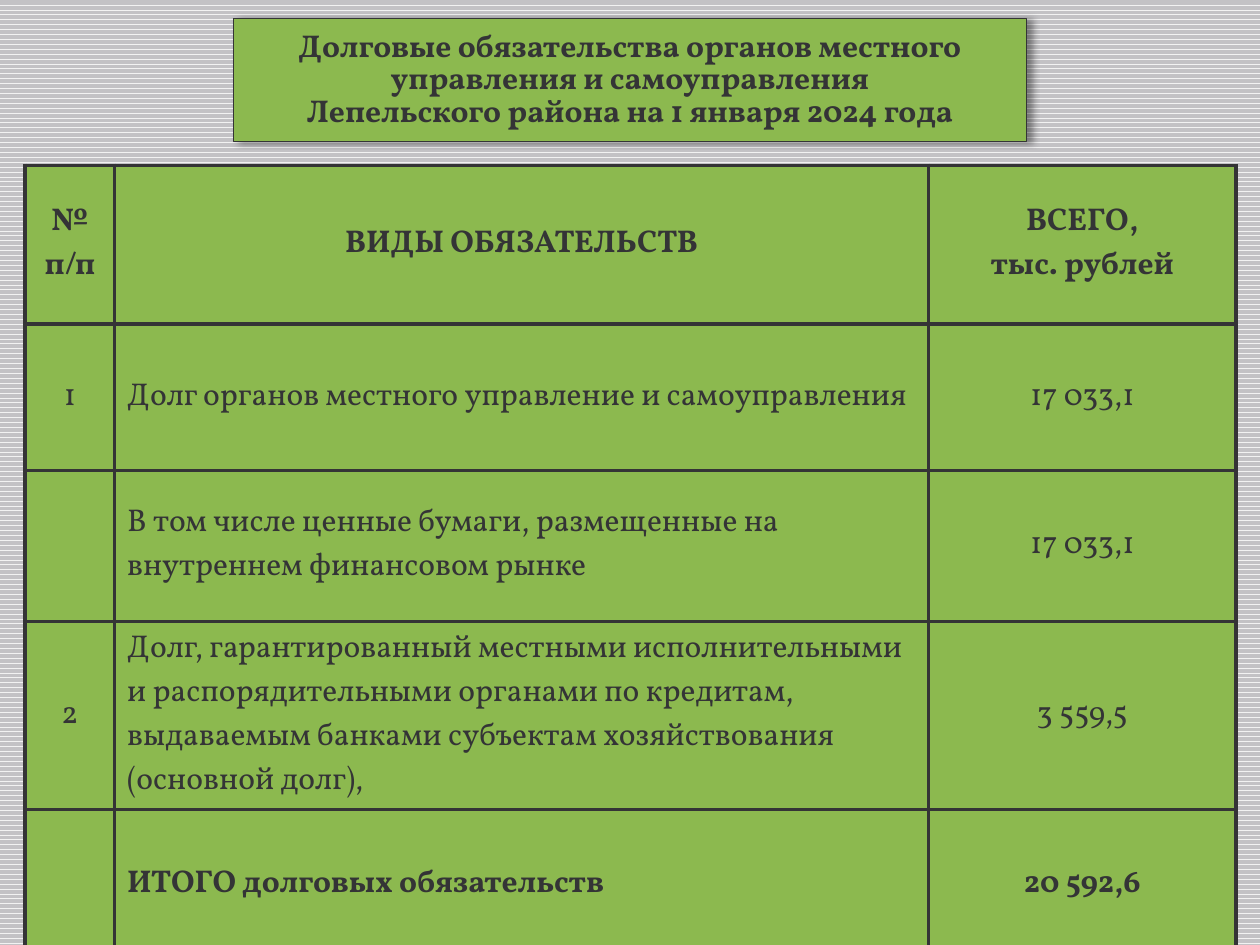
from lxml.etree import SubElement
from pptx import Presentation
from pptx.dml.color import RGBColor
from pptx.enum.dml import MSO_PATTERN
from pptx.enum.shapes import MSO_SHAPE
from pptx.enum.text import MSO_ANCHOR, PP_ALIGN
from pptx.oxml import parse_xml
from pptx.oxml.ns import nsdecls, qn
from pptx.util import Inches, Pt

COLORS = {"green": "8CB94F", "ink": "343436", "pale": "F2F2F2",
          "gray": "C3C2C5", "black": "000000"}
TITLE = ["Долговые обязательства органов местного управления и самоуправления",
         "Лепельского района на 1 января 2024 года"]
ROWS = [
    ("№ п/п", "ВИДЫ ОБЯЗАТЕЛЬСТВ", "ВСЕГО,\nтыс. рублей"),
    ("1", "Долг органов местного управление и самоуправления", "17 033,1"),
    ("", "В том числе ценные бумаги, размещенные на внутреннем финансовом рынке",
     "17 033,1"),
    ("2", "Долг, гарантированный местными исполнительными и распорядительными "
     "органами по кредитам, выдаваемым банками субъектам хозяйствования "
     "(основной долг),", "3 559,5"),
    ("", "ИТОГО долговых обязательств", "20 592,6"),
]
WIDTHS = [0.71, 6.46, 2.44]
HEIGHTS = [1.26, 1.16, 1.2, 1.18, 1.18]


def color(name):
    return RGBColor.from_string(COLORS[name])


class Page:
    font = "Vollkorn"
    size = Pt(18)

    def __init__(self, deck):
        self.wide, self.high = deck.slide_width, deck.slide_height
        self.slide = deck.slides.add_slide(deck.slide_layouts[6])

    def place(self, left, top, width, height):
        return [int(self.wide * left), int(self.high * top),
                int(self.wide * width), int(self.high * height)]

    def back(self):
        fill = self.slide.background.fill
        fill.patterned()
        fill.pattern = MSO_PATTERN.WAVE
        fill.fore_color.rgb = color("pale")
        fill.back_color.rgb = color("gray")

    def paint(self, item):
        item.fill.solid()
        item.fill.fore_color.rgb = color("green")

    def label(self, frame, lines, bold, align, space=None):
        frame.text = "\n".join(lines)
        for para in frame.paragraphs:
            para.alignment = align
            para.line_spacing = space
            para.font.name = self.font
            para.font.size = self.size
            para.font.bold = bold
            para.font.color.rgb = color("ink")

    def title(self, lines, *area):
        box = self.slide.shapes.add_shape(MSO_SHAPE.RECTANGLE, *self.place(*area))
        self.paint(box)
        box.line.color.rgb = color("ink")
        box.line.width = Pt(0.5)
        box.shadow.inherit = False
        glow = box._element.spPr.find(qn("a:effectLst"))
        glow.append(parse_xml(
            f'<a:outerShdw {nsdecls("a")} blurRad="{Pt(4)}" dist="{Pt(3)}" dir="0">'
            f'<a:srgbClr val="{COLORS["black"]}"><a:alpha val="40000"/></a:srgbClr>'
            '</a:outerShdw>'))
        box.text_frame.word_wrap = True
        box.text_frame.vertical_anchor = MSO_ANCHOR.MIDDLE
        self.label(box.text_frame, lines, True, PP_ALIGN.CENTER, 0.85)

    def edge(self, cell):
        props = cell._tc.get_or_add_tcPr()
        for spot, side in enumerate(("lnL", "lnR", "lnT", "lnB")):
            line = props.makeelement(qn(f"a:{side}"), {"w": str(Pt(2.25))})
            fill = SubElement(line, qn("a:solidFill"))
            SubElement(fill, qn("a:srgbClr"), val=COLORS["ink"])
            props.insert(spot, line)

    def table(self, rows, widths, heights, *area):
        grid = self.slide.shapes.add_table(
            len(rows), len(widths), *self.place(*area)).table
        grid.first_row = grid.horz_banding = False
        for col, width in zip(grid.columns, widths):
            col.width = Inches(width)
        for row, height in zip(grid.rows, heights):
            row.height = Inches(height)
        for r, texts in enumerate(rows):
            for c, text in enumerate(texts):
                cell = grid.cell(r, c)
                self.paint(cell)
                self.edge(cell)
                cell.vertical_anchor = MSO_ANCHOR.MIDDLE
                align = PP_ALIGN.LEFT if r and c == 1 else PP_ALIGN.CENTER
                self.label(cell.text_frame, text.split("\n"),
                           r in (0, len(rows) - 1), align)


def main():
    deck = Presentation()
    deck.slide_width, deck.slide_height = Inches(10), Inches(7.5)
    page = Page(deck)
    page.back()
    page.title(TITLE, 0.185, 0.02, 0.63, 0.13)
    page.table(ROWS, WIDTHS, HEIGHTS, 0.02, 0.175, 0.96, 0.8)
    deck.save("out.pptx")


if __name__ == "__main__":
    main()
